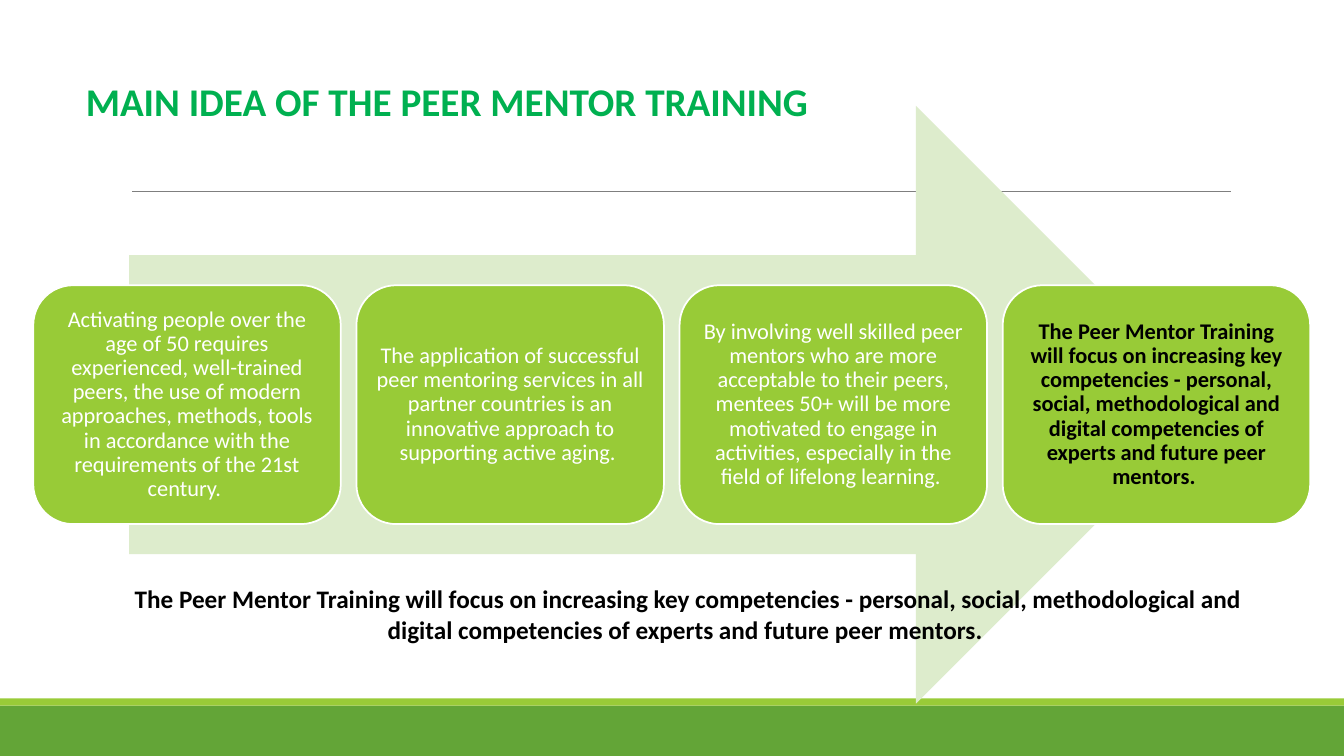
from lxml import etree
from pptx import Presentation
from pptx.dml.color import RGBColor
from pptx.enum.shapes import MSO_CONNECTOR, MSO_SHAPE
from pptx.enum.text import MSO_ANCHOR, PP_ALIGN
from pptx.oxml.ns import qn
from pptx.util import Inches, Pt

RECT, ROUNDED, ARROW = MSO_SHAPE.RECTANGLE, MSO_SHAPE.ROUNDED_RECTANGLE, MSO_SHAPE.RIGHT_ARROW
STRAIGHT = MSO_CONNECTOR.STRAIGHT
TOP, MIDDLE = MSO_ANCHOR.TOP, MSO_ANCHOR.MIDDLE
CENTER = PP_ALIGN.CENTER

# Content
FONT = "Calibri"
TITLE = "MAIN IDEA OF THE PEER MENTOR TRAINING "
FOCUS = ("The Peer Mentor Training will focus on increasing key competencies - personal, "
         "social, methodological and digital competencies of experts and future peer mentors. ")
STEPS = [  # text, colour, bold
    ("Activating people over the age of 50 requires experienced, well-trained peers, "
     "the use of modern approaches, methods, tools in accordance with the requirements "
     "of the 21st century. ", "FFFFFF", False),
    ("The application of successful peer mentoring services in all partner countries is "
     "an innovative approach to supporting active aging. ", "FFFFFF", False),
    ("By involving well skilled peer mentors who are more acceptable to their peers, "
     "mentees 50+ will be more motivated to engage in activities, especially in the field "
     "of lifelong learning. ", "FFFFFF", False),
    (FOCUS, "000000", True),
]
FOOTER_BANDS = [(7, 0.5, "63A537"), (6.93, 0.07, "99CB38")]  # top, height, fill

# Layout in inches
SLIDE_W, SLIDE_H = 13.33, 7.5
STEP_LEFT, STEP_TOP, STEP_W, STEP_H, STEP_PITCH = 0.33, 2.83, 3.05, 2.37, 3.205


def colour(hex_code):
    return RGBColor.from_string(hex_code)


def add_block(kind, left, top, width, height, fill, outline=None):
    block = slide.shapes.add_shape(kind, Inches(left), Inches(top), Inches(width), Inches(height))
    block.shadow.inherit = False
    block.fill.solid()
    block.fill.fore_color.rgb = colour(fill)
    if outline:
        block.line.color.rgb = colour(outline)
        block.line.width = Pt(1.25)
    else:
        block.line.fill.background()
    return block


def write(holder, text, size, hex_code, bold, inset=(0.1, 0.05), anchor=TOP, spacing=1.0):
    frame = holder.text_frame
    frame.word_wrap = True
    frame.vertical_anchor = anchor
    frame.margin_left = frame.margin_right = Inches(inset[0])
    frame.margin_top = frame.margin_bottom = Inches(inset[1])
    paragraph = frame.paragraphs[0]
    paragraph.alignment = CENTER
    paragraph.line_spacing = spacing
    run = paragraph.add_run()
    run.text = text
    run.font.name = FONT
    run.font.size = Pt(size)
    run.font.bold = bold
    run.font.color.rgb = colour(hex_code)


def add_caption(left, top, width, height, text, size, hex_code):
    box = slide.shapes.add_textbox(Inches(left), Inches(top), Inches(width), Inches(height))
    write(box, text, size, hex_code, True)


prs = Presentation()
prs.slide_width, prs.slide_height = Inches(SLIDE_W), Inches(SLIDE_H)
slide = prs.slides.add_slide(prs.slide_layouts[6])

# Footer bands and rule
for top, height, fill in FOOTER_BANDS:
    add_block(RECT, 0, top, SLIDE_W, height, fill)
rule = slide.shapes.add_connector(STRAIGHT, Inches(1.31), Inches(1.9), Inches(12.21), Inches(1.9))
rule.line.color.rgb = colour("7F7F7F")
rule.line.width = Pt(0.75)
etree.SubElement(rule._element.spPr, qn("a:effectLst"))

# Arrow behind the steps
add_block(ARROW, 1.28, 1.05, 10.77, 5.93, "DDECCC")

# Steps
for index, (text, hex_code, bold) in enumerate(STEPS):
    step = add_block(ROUNDED, STEP_LEFT + index * STEP_PITCH, STEP_TOP, STEP_W, STEP_H,
                     "98CB37", "FFFFFF")
    write(step, text, 16, hex_code, bold, (0.07, 0.07), MIDDLE, 0.9)

# Title and conclusion
add_caption(0.33, 0.72, 8.29, 0.57, TITLE, 28, "00B050")
add_caption(1.07, 5.74, 11.51, 0.71, FOCUS, 18, "000000")

prs.save("out.pptx")
